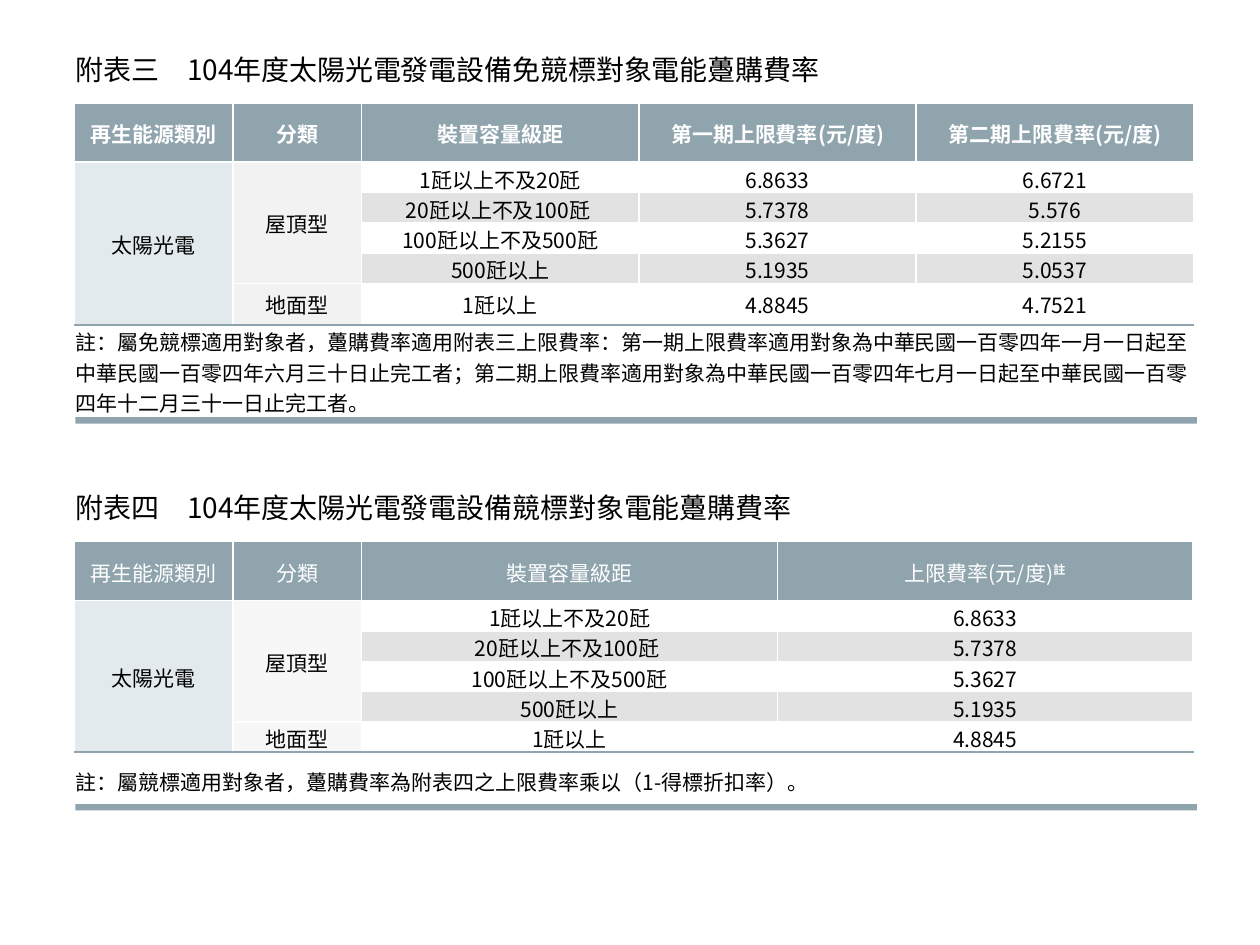
"""Build a slide with two tables of solar power purchase rates."""
from lxml.etree import SubElement
from pptx import Presentation
from pptx.dml.color import RGBColor
from pptx.enum.shapes import MSO_SHAPE as Shape
from pptx.enum.text import MSO_ANCHOR as Anchor, PP_ALIGN as Align
from pptx.oxml.ns import qn
from pptx.util import Cm, Pt

FONT = "Noto Sans CJK SC"
ACCENT, WHITE, BLACK = "90A4AE", "FFFFFF", "000000"
SOURCE_FILL, BAND_FILL = "E2EAED", "E2E2E2"
LEFT, HEAD_HEIGHT, ROW_HEIGHT = 1.5, 1.19, 0.61
LAST, NOTE = 5, 6

HEADERS = ["再生能源類別", "分類", "裝置容量級距"]
CAPACITIES = ["1瓩以上不及20瓩", "20瓩以上不及100瓩 ", "100瓩以上不及500瓩", "500瓩以上", "1瓩以上"]
FIRST_RATES = ["6.8633", "5.7378", "5.3627", "5.1935", "4.8845"]
SECOND_RATES = ["6.6721", "5.576", "5.2155", "5.0537", "4.7521"]

SECTIONS = [
    {
        "title": "附表三　104年度太陽光電發電設備免競標對象電能躉購費率",
        "title_top": 0.91, "table_top": 2.08, "bar_top": 8.41,
        "widths": [3.2, 2.59, 5.59, 5.59, 5.59],
        "ground_height": 0.84, "note_height": 1.85,
        "headers": HEADERS + ["第一期上限費率(元/度)", "第二期上限費率(元/度)"],
        "rates": [FIRST_RATES, SECOND_RATES],
        "bold": True, "mark": "", "type_fill": "F2F2F2", "note_align": Align.LEFT,
        "note": "註：屬免競標適用對象者，躉購費率適用附表三上限費率：第一期上限費率適用對象為"
                "中華民國一百零四年一月一日起至中華民國一百零四年六月三十日止完工者；"
                "第二期上限費率適用對象為中華民國一百零四年七月一日起至"
                "中華民國一百零四年十二月三十一日止完工者。",
    },
    {
        "title": "附表四　104年度太陽光電發電設備競標對象電能躉購費率",
        "title_top": 9.73, "table_top": 10.92, "bar_top": 16.21,
        "widths": [3.2, 2.59, 8.38, 8.38],
        "ground_height": ROW_HEIGHT, "note_height": 1.17,
        "headers": HEADERS + ["上限費率(元/度)"],
        "rates": [FIRST_RATES],
        "bold": False, "mark": "註", "type_fill": "F7F7F7", "note_align": Align.JUSTIFY,
        "note": "註：屬競標適用對象者，躉購費率為附表四之上限費率乘以（1-得標折扣率）。",
    },
]


def rgb(value):
    return RGBColor.from_string(value)


def add_span(para, text, size=12, color=BLACK, bold=False):
    span = para.add_run()
    span.text = text
    font = span.font
    font.size, font.bold, font.name = Pt(size), bold, FONT
    font.color.rgb = rgb(color)
    SubElement(span._r.get_or_add_rPr(), qn("a:ea"), typeface=FONT)
    return span


def add_title(page, section):
    box = page.shapes.add_textbox(Cm(1.27), Cm(section["title_top"]), Cm(22.86), Cm(0.99))
    frame = box.text_frame
    frame.word_wrap, frame.vertical_anchor = True, Anchor.MIDDLE
    add_span(frame.paragraphs[0], section["title"], size=16)


def add_bar(page, top):
    bar = page.shapes.add_shape(Shape.RECTANGLE, Cm(1.52), Cm(top), Cm(22.61), Cm(0.13))
    bar.shadow.inherit = False
    bar.fill.solid()
    bar.fill.fore_color.rgb = rgb(ACCENT)
    bar.line.fill.background()


def style_cell(cell, fill, top, bottom):
    cell.margin_left = cell.margin_right = cell.margin_top = Cm(0.03)
    cell.margin_bottom = 0
    cell.vertical_anchor = Anchor.MIDDLE
    sides = {"a:lnL": WHITE, "a:lnR": WHITE, "a:lnT": top, "a:lnB": bottom}
    for tag, color in sides.items():
        line = SubElement(cell._tc.get_or_add_tcPr(), qn(tag), w=str(Pt(1)))
        SubElement(SubElement(line, qn("a:solidFill")), qn("a:srgbClr"), val=color)
    cell.fill.solid()
    cell.fill.fore_color.rgb = rgb(fill)


def cell_fill(row, col, section):
    if row == 0:
        return ACCENT
    if row == NOTE:
        return WHITE
    if col < 2:
        return [SOURCE_FILL, section["type_fill"]][col]
    return BAND_FILL if row in (2, 4) else WHITE


def table_rows(section):
    sources = ["太陽光電", "", "", "", ""]
    types = ["屋頂型", "", "", "", "地面型"]
    body = zip(sources, types, CAPACITIES, *section["rates"])
    note = [section["note"]] + [""] * (len(section["widths"]) - 1)
    return [section["headers"], *body, note]


def add_rate_table(page, section):
    rows, widths = table_rows(section), section["widths"]
    heights = [HEAD_HEIGHT] + [ROW_HEIGHT] * 4 + [section["ground_height"], section["note_height"]]
    frame = page.shapes.add_table(len(rows), len(widths), Cm(LEFT), Cm(section["table_top"]),
                                  Cm(sum(widths)), Cm(sum(heights)))
    table = frame.table
    table.first_row = table.horz_banding = False
    for column, width in zip(table.columns, widths):
        column.width = Cm(width)
    for line, height in zip(table.rows, heights):
        line.height = Cm(height)
    table.cell(1, 0).merge(table.cell(LAST, 0))
    table.cell(1, 1).merge(table.cell(LAST - 1, 1))
    table.cell(NOTE, 0).merge(table.cell(NOTE, len(widths) - 1))

    for row, texts in enumerate(rows):
        for col, text in enumerate(texts):
            cell = table.cell(row, col)
            end = row + (cell.span_height if cell.is_merge_origin else 1) - 1
            style_cell(cell, cell_fill(row, col, section),
                       ACCENT if row == NOTE else WHITE, ACCENT if end == LAST else WHITE)
            if text:
                para = cell.text_frame.paragraphs[0]
                para.alignment = section["note_align"] if row == NOTE else Align.CENTER
                add_span(para, text, color=BLACK if row else WHITE,
                         bold=section["bold"] and row == 0)
    if section["mark"]:
        para = table.cell(0, len(widths) - 1).text_frame.paragraphs[0]
        mark = add_span(para, section["mark"], color=WHITE, bold=True)
        mark._r.get_or_add_rPr().set("baseline", "30000")


def main():
    deck = Presentation()
    deck.slide_width, deck.slide_height = Cm(25.4), Cm(19.05)
    page = deck.slides.add_slide(deck.slide_layouts[6])
    for section in SECTIONS:
        add_title(page, section)
        add_rate_table(page, section)
        add_bar(page, section["bar_top"])
    deck.save("out.pptx")


if __name__ == "__main__":
    main()
